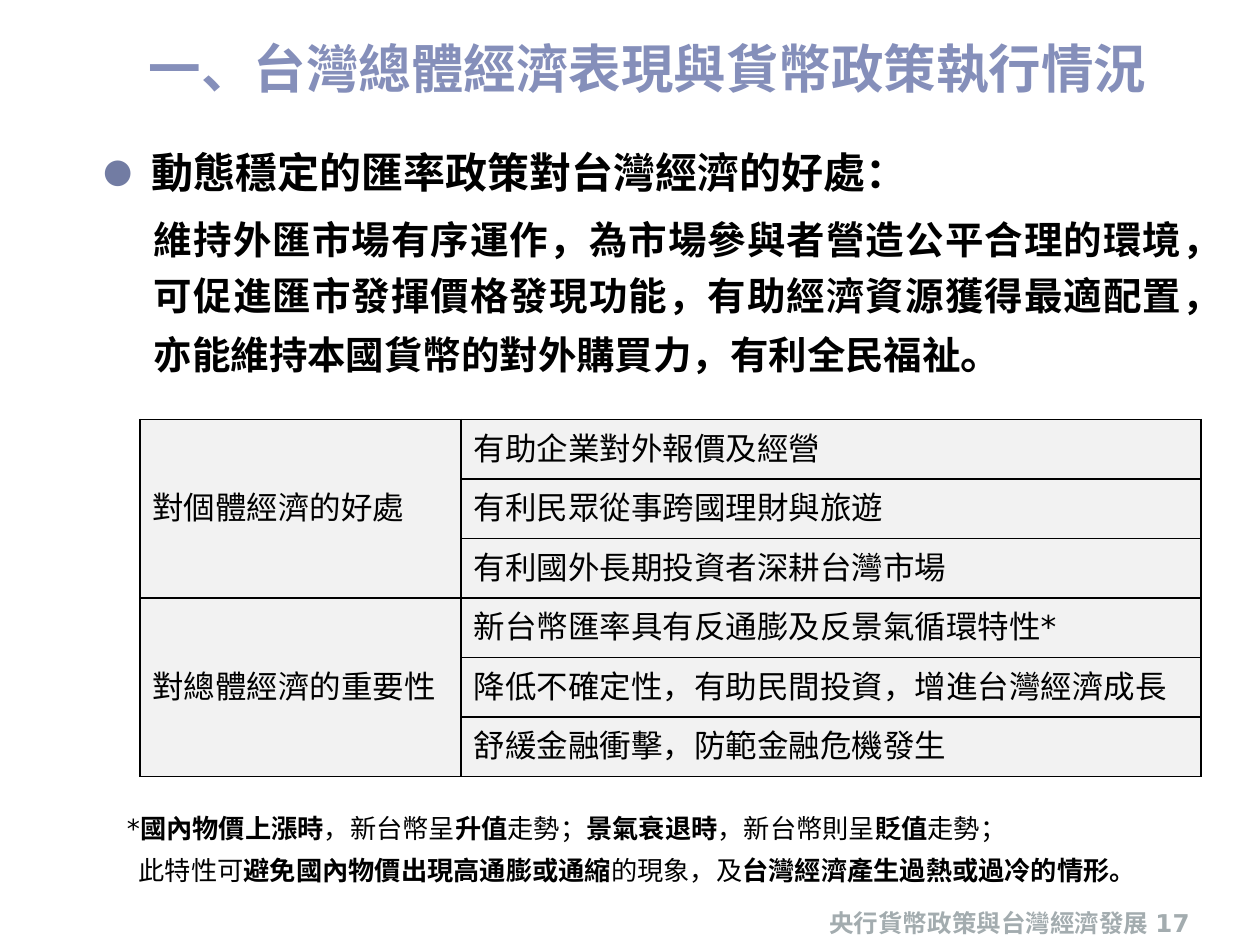
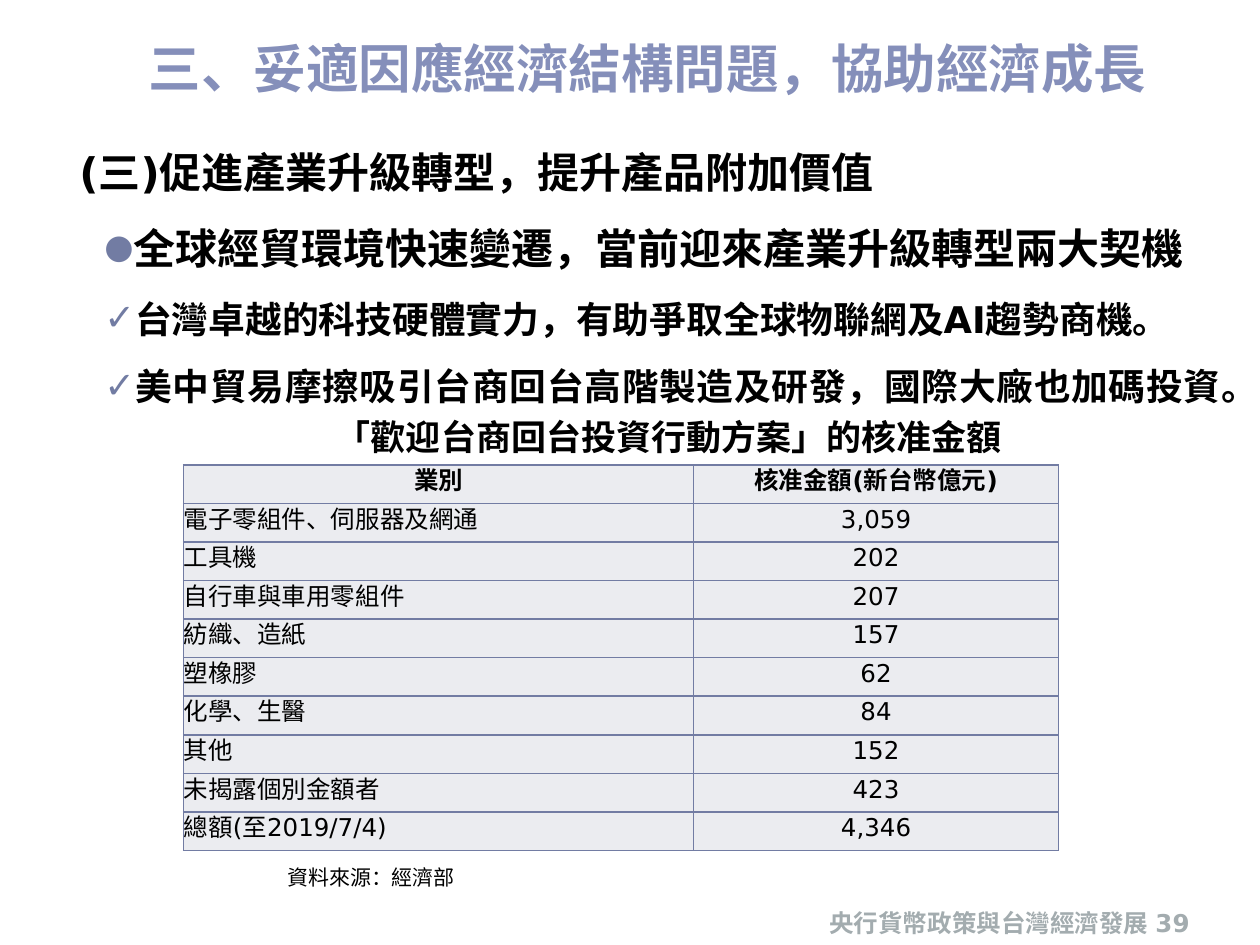
from lxml import etree
from pptx import Presentation
from pptx import util as u
from pptx.dml.color import RGBColor
from pptx.enum import text
from pptx.oxml.ns import qn

Pt = u.Pt
AL = text.PP_ALIGN
MID = text.MSO_ANCHOR.MIDDLE
LOW = text.MSO_ANCHOR.BOTTOM
SANS, NOTO = "DejaVu Sans", "Noto Sans CJK SC"
HUES = {"title": "858FBA", "ink": "000000", "foot": "A3ACAF", "mark": "727CA3",
        "paper": "FFFFFF", "grey": "F2F2F2", "pale": "EBECF0"}


class Deck:
    """Holds the shared style and the current slide."""

    def __init__(self):
        self.prs = Presentation()
        self.prs.slide_width, self.prs.slide_height = Pt(720), Pt(540)
        self.slide = None

    def hue(self, name):
        return RGBColor.from_string(HUES[name])

    def label(self, para, words, size, hue="ink", bold=False, font=SANS, align=AL.LEFT):
        """Fill a paragraph; parts between bars flip the weight."""
        parts = words.split("|")
        para.text = parts[0]
        for part in parts[1:]:
            para.add_run().text = part
        para.alignment = align
        for i, run in enumerate(para.runs):
            run.font.size, run.font.name = Pt(size), font
            run.font.bold = bold != (i % 2 == 1)
            run.font.color.rgb = self.hue(hue)
            east = etree.SubElement(run._r.get_or_add_rPr(), qn("a:ea"))
            east.set("typeface", SANS)
        return para

    def indent(self, para, left, first=0, mark=None, scale=100):
        """Set the indents and an optional bullet."""
        ppr = para._p.get_or_add_pPr()
        ppr.set("marL", str(Pt(left)))
        ppr.set("indent", str(Pt(first)))
        if mark:
            tint = etree.SubElement(ppr, qn("a:buClr"))
            etree.SubElement(tint, qn("a:srgbClr")).set("val", HUES["mark"])
            etree.SubElement(ppr, qn("a:buSzPct")).set("val", str(scale * 1000))
            etree.SubElement(ppr, qn("a:buFont")).set("typeface", SANS)
            etree.SubElement(ppr, qn("a:buChar")).set("char", mark)

    def pad(self, frame, left, top, right, base):
        """Set the insets of a text frame."""
        frame.margin_left, frame.margin_top = Pt(left), Pt(top)
        frame.margin_right, frame.margin_bottom = Pt(right), Pt(base)

    def page(self, title, number):
        """Start a slide with its title and footer."""
        self.slide = self.prs.slides.add_slide(self.prs.slide_layouts[5])
        head = self.slide.shapes.title
        head.left, head.top, head.width, head.height = Pt(57), Pt(17.2), Pt(649.5), Pt(51)
        frame = head.text_frame
        frame.auto_size, frame.word_wrap = text.MSO_AUTO_SIZE.NONE, True
        frame.vertical_anchor = text.MSO_ANCHOR.TOP
        self.pad(frame, 28, 3.6, 7.2, 3.6)
        para = self.label(frame.paragraphs[0], title, 30, "title", True)
        for run in para.runs[1::2]:
            run.font.bold, run.font.name = True, NOTO
        for left, width, words, align in (
                (439.2, 252, "央行貨幣政策與台灣經濟發展", AL.CENTER),
                (643.7, 43.2, str(number), AL.RIGHT)):
            note = self.box(left, 510.5, width, 28.8)
            note.vertical_anchor = LOW
            self.label(note.paragraphs[0], words, 14, "foot", True, align=align)

    def box(self, left, top, width, height, fill=None):
        """Add a wrapping text box and return its frame."""
        shape = self.slide.shapes.add_textbox(Pt(left), Pt(top), Pt(width), Pt(height))
        if fill:
            shape.fill.solid()
            shape.fill.fore_color.rgb = self.hue(fill)
        shape.text_frame.word_wrap = True
        return shape.text_frame

    def body(self, height, items, fill=None):
        """Add the main text from (words, size, spacing, after, level, indent) rows."""
        frame = self.box(31, 67.7, 674.6, height, fill)
        self.pad(frame, 14.4, 7.2, 7.2, 3.6)
        for i, (words, size, space, after, level, dent) in enumerate(items):
            para = frame.add_paragraph() if i else frame.paragraphs[0]
            para.level, para.line_spacing, para.space_after = level, space, Pt(after)
            self.indent(para, *dent)
            self.label(para, words, size, bold=True, align=AL.JUSTIFY)
        return frame

    def table(self, left, top, cols, high, rows):
        """Add a plain table and return it."""
        shape = self.slide.shapes.add_table(
            rows, len(cols), Pt(left), Pt(top), Pt(sum(cols)), Pt(high * rows))
        grid = shape.table
        grid.first_row = grid.horz_banding = False
        for col, width in zip(grid.columns, cols):
            col.width = Pt(width)
        for row in grid.rows:
            row.height = Pt(high)
        return grid

    def cell(self, cell, fill, edge):
        """Give a cell its fill, borders and anchor."""
        tcpr = cell._tc.get_or_add_tcPr()
        for side in ("lnL", "lnR", "lnT", "lnB"):
            line = etree.SubElement(tcpr, qn("a:" + side), w=str(Pt(1)))
            ink = etree.SubElement(line, qn("a:solidFill"))
            etree.SubElement(ink, qn("a:srgbClr")).set("val", HUES[edge])
        cell.fill.solid()
        cell.fill.fore_color.rgb = self.hue(fill)
        cell.vertical_anchor = MID


def rate_page(deck):
    """Benefits of a stable exchange rate."""
    deck.page("一、台灣總體經濟表現與貨幣政策執行情況", 17)
    frame = deck.body(425.5, [
        ("動態穩定的匯率政策對台灣經濟的好處：", 24, 1.3, 6, 0, (41, -27.4, "●", 80)),
        ("維持外匯市場有序運作，為市場參與者營造公平合理的環境，可促進匯市發揮價格發現功能，"
         "有助經濟資源獲得最適配置，亦能維持本國貨幣的對外購買力，有利全民福祉|。",
         22, 1.2, 0, 0, (42.5,)),
    ], "paper")
    stop = frame.paragraphs[1].runs[1].font
    stop.size, stop.bold = Pt(24), True

    groups = [
        ("對個體經濟的好處", ["有助企業對外報價及經營", "有利民眾從事跨國理財與旅遊",
                      "有利國外長期投資者深耕台灣市場"]),
        ("對總體經濟的重要性", ["新台幣匯率具有反通膨及反景氣循環特性*",
                       "降低不確定性，有助民間投資，增進台灣經濟成長",
                       "舒緩金融衝擊，防範金融危機發生"]),
    ]
    grid = deck.table(79.9, 239.8, (183.6, 422.9), 34, 6)
    for cell in grid.iter_cells():
        deck.cell(cell, "grey", "ink")
    for g, (name, gains) in enumerate(groups):
        top = g * 3
        grid.cell(top, 0).merge(grid.cell(top + 2, 0))
        deck.label(grid.cell(top, 0).text_frame.paragraphs[0], name, 18)
        for i, gain in enumerate(gains):
            deck.label(grid.cell(top + i, 1).text_frame.paragraphs[0], gain, 18)

    note = deck.box(65.5, 460.8, 607, 49.7)
    first, second = note.paragraphs[0], note.add_paragraph()
    deck.label(first, "*|國內物價上漲時|，新台幣呈|升值|走勢；|景氣衰退時|，新台幣則呈|貶值|走勢；", 15)
    deck.indent(second, 6.6)
    deck.label(second, "此特性可|避免國內物價出現高通膨或通縮|的現象，及|台灣經濟產生過熱或過冷的情形。", 15)
    first.space_after = second.space_after = Pt(6)


def trade_page(deck):
    """Industry upgrading and approved investment."""
    deck.page("三、|妥適因應|經濟結構問題，協助經濟成長", 39)
    dent = (28, -13.7)
    deck.body(439, [
        ("(三)促進產業升級轉型，提升產品附加價值", 24, 1.3, 6, 0, (0,)),
        ("全球經貿環境快速變遷，當前迎來產業升級轉型兩大契機", 24, 1.3, 6, 0, (*dent, "●", 80)),
        ("台灣卓越的科技硬體實力，有助爭取全球物聯網及AI趨勢商機。", 21, 1.3, 6, 1, (*dent, "✓")),
        ("美中貿易摩擦吸引台商回台高階製造及研發，國際大廠也加碼投資。", 21, 1.3, 6, 1, (*dent, "✓")),
    ])
    head = deck.box(161.3, 234, 442, 31.7)
    deck.label(head.paragraphs[0], "「歡迎台商回台投資行動方案」的核准金額", 20,
               bold=True, align=AL.CENTER)

    sums = [
        ("業別", "核准金額(新台幣億元)"), ("電子零組件、伺服器及網通", "3,059"), ("工具機", "202"),
        ("自行車與車用零組件", "207"), ("紡織、造紙", "157"), ("塑橡膠", "62"),
        ("化學、生醫", "84"), ("其他", "152"), ("未揭露個別金額者", "423"),
        ("總額(至2019/7/4)", "4,346"),
    ]
    grid = deck.table(105, 265.7, (291.4, 208.5), 22.03, len(sums))
    for r, pair in enumerate(sums):
        for c, words in enumerate(pair):
            cell = grid.cell(r, c)
            deck.cell(cell, "pale", "mark")
            deck.pad(cell, 0, 0, 0, 0)
            para = cell.text_frame.paragraphs[0]
            para.line_spacing = Pt(13)
            deck.label(para, words, 14, bold=r == 0,
                       align=AL.CENTER if c or r == 0 else AL.LEFT)

    source = deck.box(157, 490.3, 144, 23.8)
    deck.label(source.paragraphs[0], "資料來源：經濟部", 12, font=NOTO)


def main():
    """Build both slides and save them."""
    deck = Deck()
    rate_page(deck)
    trade_page(deck)
    deck.prs.save("out.pptx")


if __name__ == "__main__":
    main()
